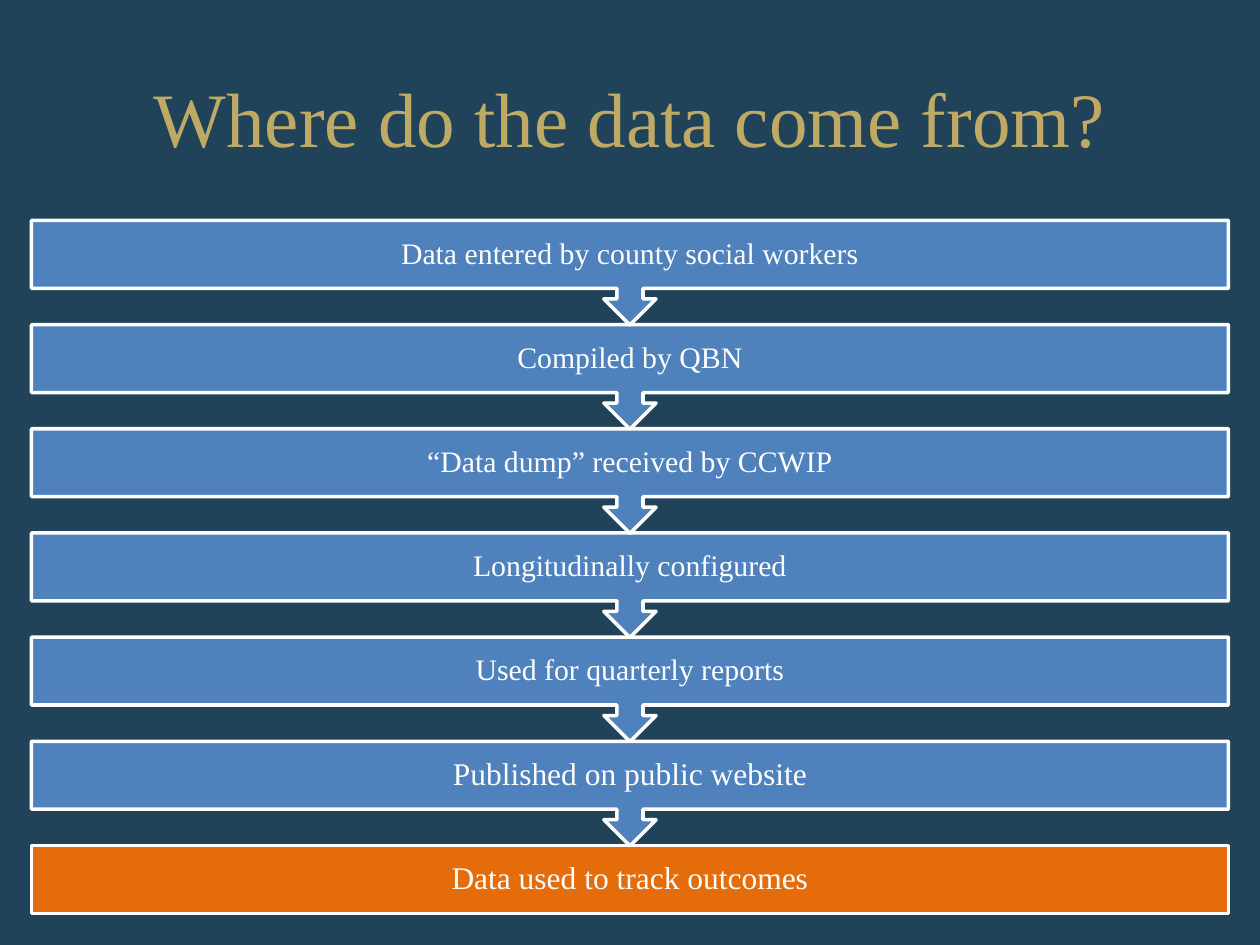
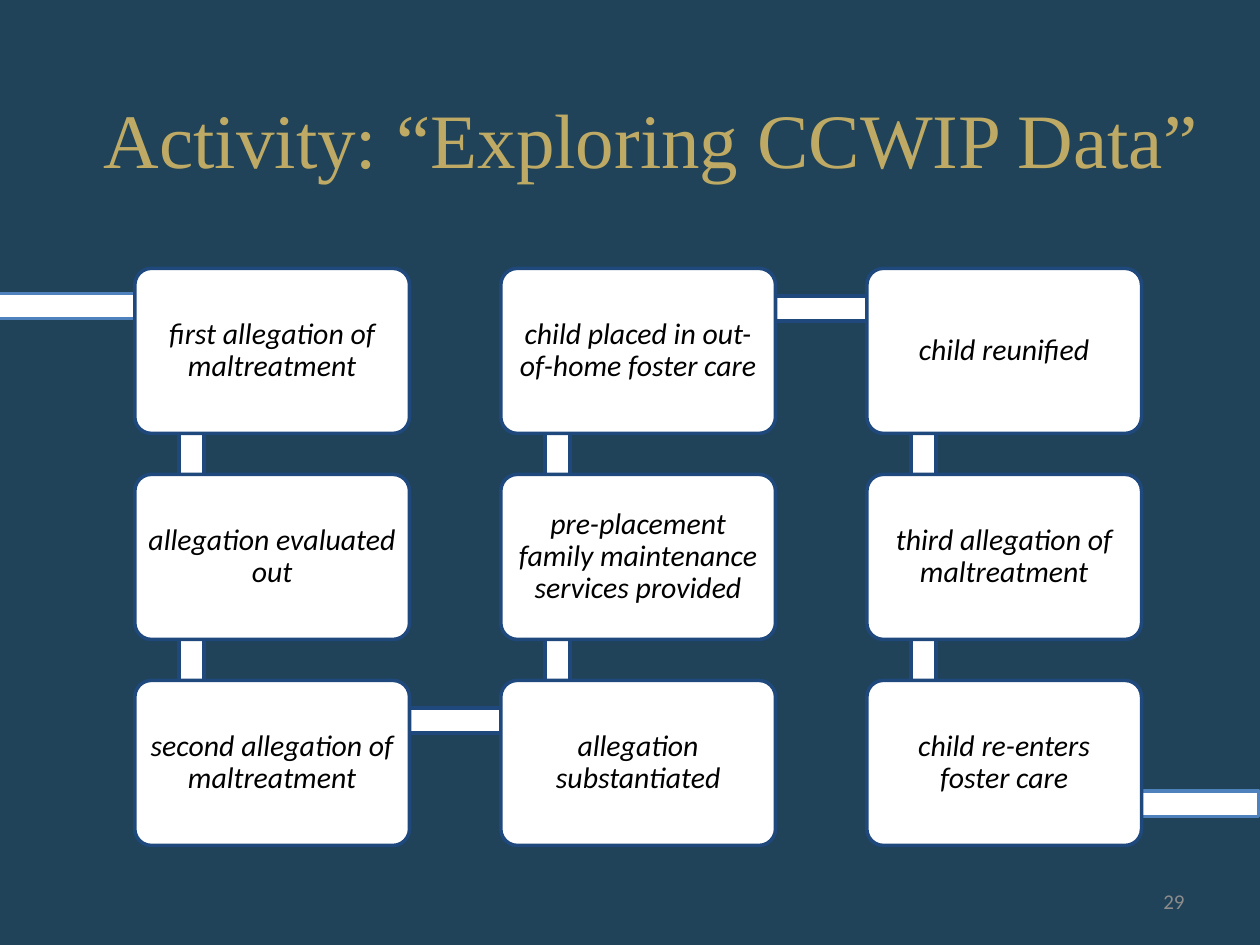
"""Build two slides: a data flow of stacked callouts and a snaking case timeline."""
from dataclasses import dataclass

from pptx import Presentation
from pptx import util as u
from pptx.dml.color import RGBColor
from pptx.enum import shapes, text


@dataclass(frozen=True)
class Theme:
    night: RGBColor = RGBColor.from_string("204359")
    gold: RGBColor = RGBColor.from_string("BEAA64")
    blue: RGBColor = RGBColor.from_string("4F81BD")
    navy: RGBColor = RGBColor.from_string("1F497D")
    orange: RGBColor = RGBColor.from_string("E46C0A")
    white: RGBColor = RGBColor.from_string("FFFFFF")
    black: RGBColor = RGBColor.from_string("000000")
    grey: RGBColor = RGBColor.from_string("8C8C8C")
    serif: str = "Times New Roman"
    sans: str = "Calibri"
    title_size: int = 44
    step_size: int = 17
    closing_size: int = 18
    number_size: int = 12
    border: int = 2


def write(holder, wording, font_name, size, color, align=text.PP_ALIGN.CENTER, inset=None):
    """Put one formatted paragraph in a holder and return the paragraph."""
    frame = holder.text_frame
    frame.word_wrap = True
    frame.vertical_anchor = text.MSO_ANCHOR.MIDDLE
    if inset is not None:
        frame.margin_left = frame.margin_right = u.Inches(inset)
        frame.margin_top = frame.margin_bottom = u.Inches(inset)
    paragraph = frame.paragraphs[0]
    paragraph.text = wording
    paragraph.alignment = align
    paragraph.font.name = font_name
    paragraph.font.size = u.Pt(size)
    paragraph.font.color.rgb = color
    return paragraph


def block(slide, preset, box, fill, line):
    """Add a bordered preset shape at left, top, width, height in inches."""
    shape = slide.shapes.add_shape(preset, *map(u.Inches, box))
    shape.shadow.inherit = False
    shape.fill.solid()
    shape.fill.fore_color.rgb = fill
    shape.line.color.rgb = line
    shape.line.width = u.Pt(theme.border)
    return shape


theme = Theme()
preset = shapes.MSO_SHAPE
deck = Presentation()
deck.slide_width, deck.slide_height = u.Inches(10), u.Inches(7.5)
deck.slide_master.background.fill.solid()
deck.slide_master.background.fill.fore_color.rgb = theme.night

pages = []
for heading, left, top in [
    ("Where do the data come from?", 0.5, 0.3),
    ("Activity: “Exploring CCWIP Data”", 0.67, 0.47),
]:
    page = deck.slides.add_slide(deck.slide_layouts[5])
    title = page.shapes.title
    title.left, title.top = u.Inches(left), u.Inches(top)
    title.width, title.height = u.Inches(9), u.Inches(1.25)
    write(title, heading, theme.serif, theme.title_size, theme.gold)
    pages.append(page)
flow, activity = pages

stages = [
    "Data entered by county social workers",
    "Compiled by QBN",
    "“Data dump” received by CCWIP",
    "Longitudinally configured",
    "Used for quarterly reports",
    "Published on public website",
    "Data used to track outcomes",
]
flow_top, last_top = 1.75, 6.71
last = len(stages) - 1
stage_pitch = (last_top - flow_top) / last
for row, stage in reversed(list(enumerate(stages))):
    final = row == last
    step = block(
        flow,
        preset.RECTANGLE if final else preset.DOWN_ARROW_CALLOUT,
        (0.25, flow_top + row * stage_pitch, 9.5, 0.54 if final else 0.83),
        theme.orange if final else theme.blue,
        theme.white,
    )
    size = theme.closing_size if row >= last - 1 else theme.step_size
    write(step, stage, theme.serif, size, theme.white, inset=0.13).line_spacing = 0.9

for entry_or_exit in [(-0.02, 2.33, 1.42, 0.2), (8.07, 6.28, 1.92, 0.2)]:
    block(activity, preset.RECTANGLE, entry_or_exit, theme.white, theme.blue)

events = [
    "first allegation of maltreatment",
    "allegation evaluated out",
    "second allegation of maltreatment",
    "allegation substantiated",
    "pre-placement family maintenance services provided",
    "child placed in out-of-home foster care",
    "child reunified",
    "third allegation of maltreatment",
    "child re-enters foster care",
]
rows = 3
grid_left, grid_top = 1.07, 2.13
column_pitch, row_pitch = 2.905, 1.635
card_width, card_height, path_width = 2.18, 1.31, 0.2
spots = []
for order in range(len(events)):
    column, row = divmod(order, rows)
    if column % 2:
        row = rows - 1 - row
    spots.append((grid_left + column * column_pitch, grid_top + row * row_pitch))

for order, (event, (left, top)) in enumerate(zip(events, spots)):
    if order + 1 < len(spots):
        next_left, next_top = spots[order + 1]
        if next_left == left:
            link = (left + 0.35, min(top, next_top) + 0.32, path_width, row_pitch)
        else:
            link = (left + 0.45, top + 0.22, column_pitch, path_width)
        block(activity, preset.RECTANGLE, link, theme.white, theme.navy)
    card = block(activity, preset.ROUNDED_RECTANGLE, (left, top, card_width, card_height),
                 theme.white, theme.navy)
    card.adjustments[0] = 0.1
    label = write(card, event, theme.sans, theme.step_size, theme.black, inset=0.07)
    label.font.italic = True
    label.line_spacing = 0.9

page_number = activity.shapes.add_textbox(*map(u.Inches, (7.17, 6.95, 2.33, 0.4)))
write(page_number, "29", theme.sans, theme.number_size, theme.grey, text.PP_ALIGN.RIGHT)

deck.save("out.pptx")
